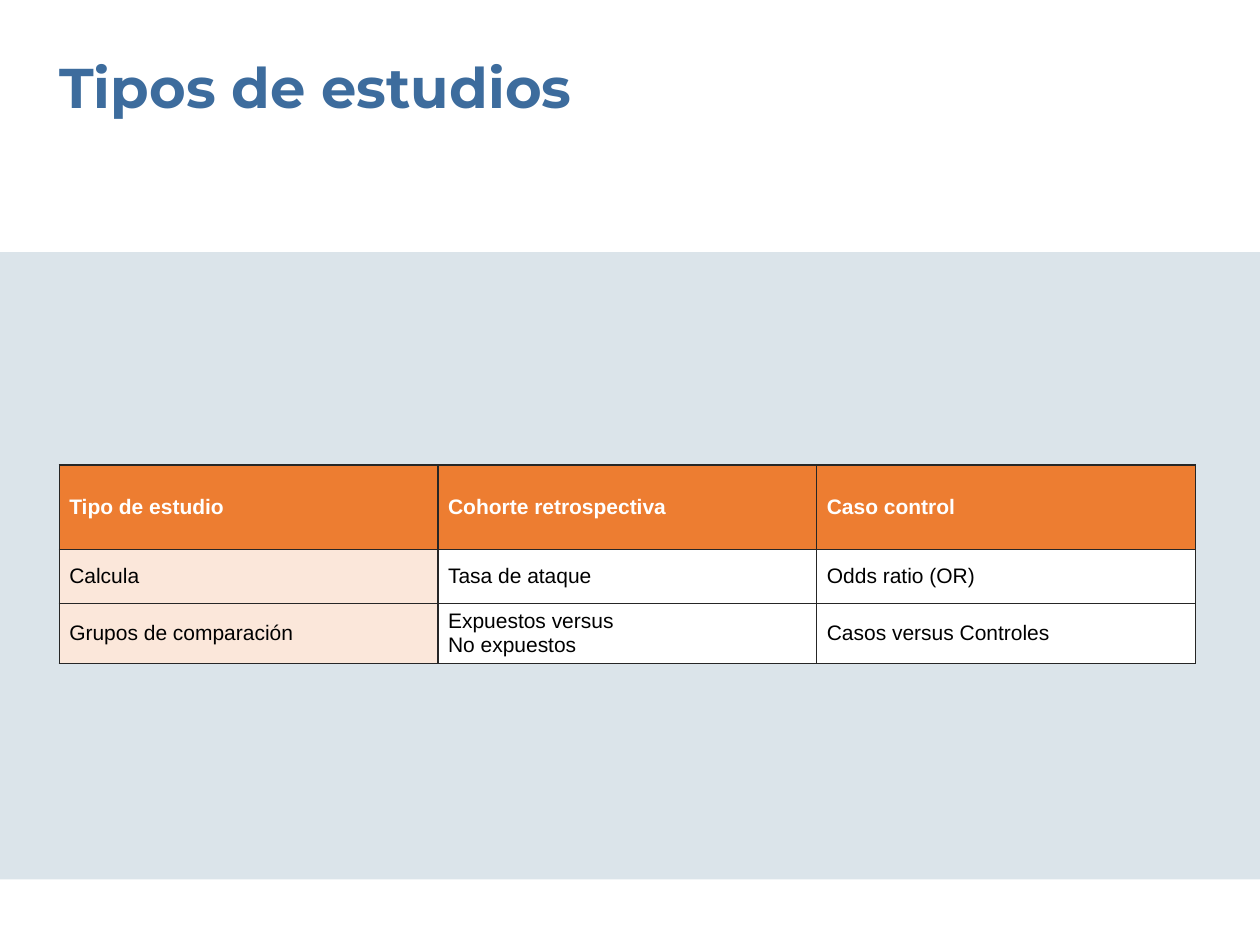
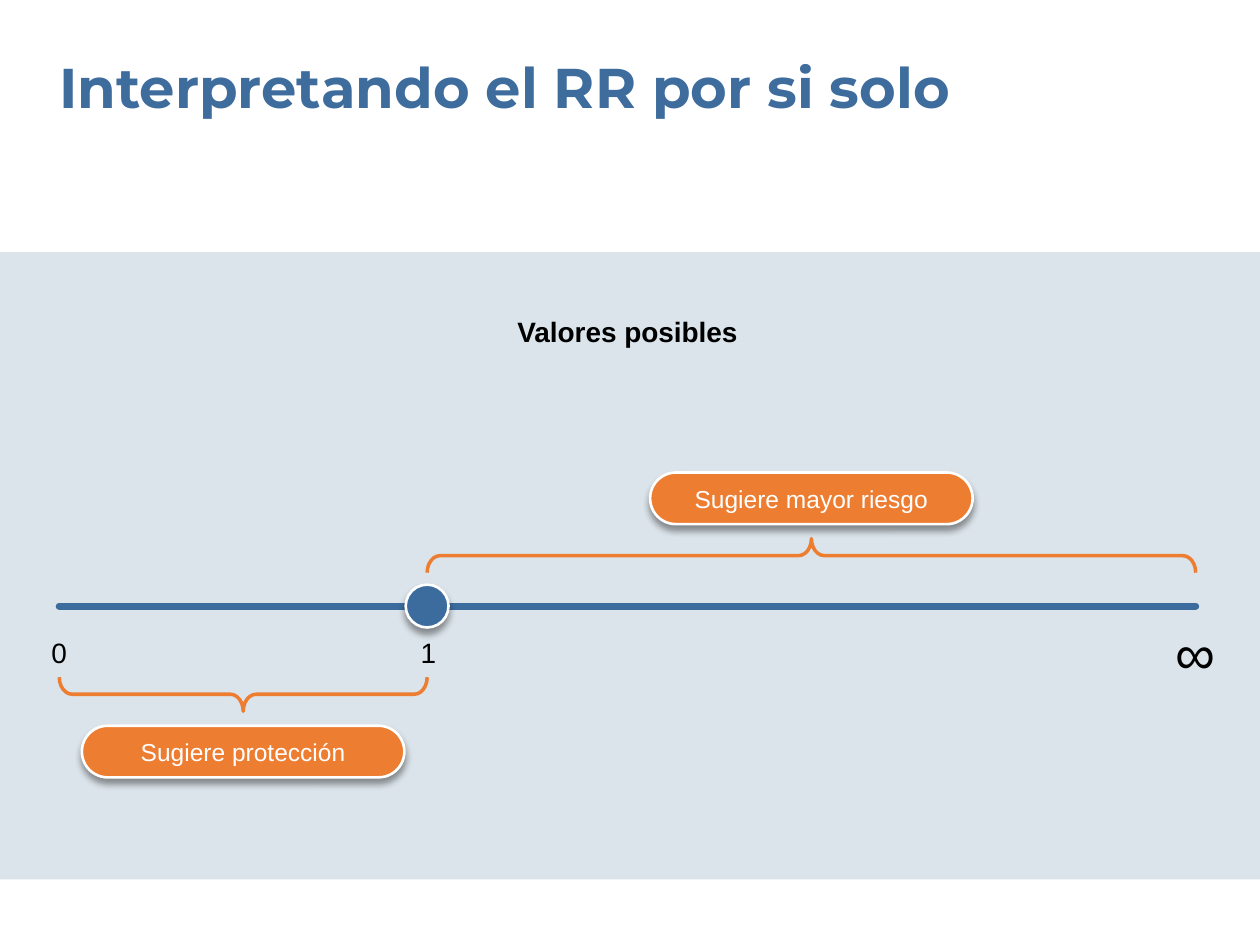
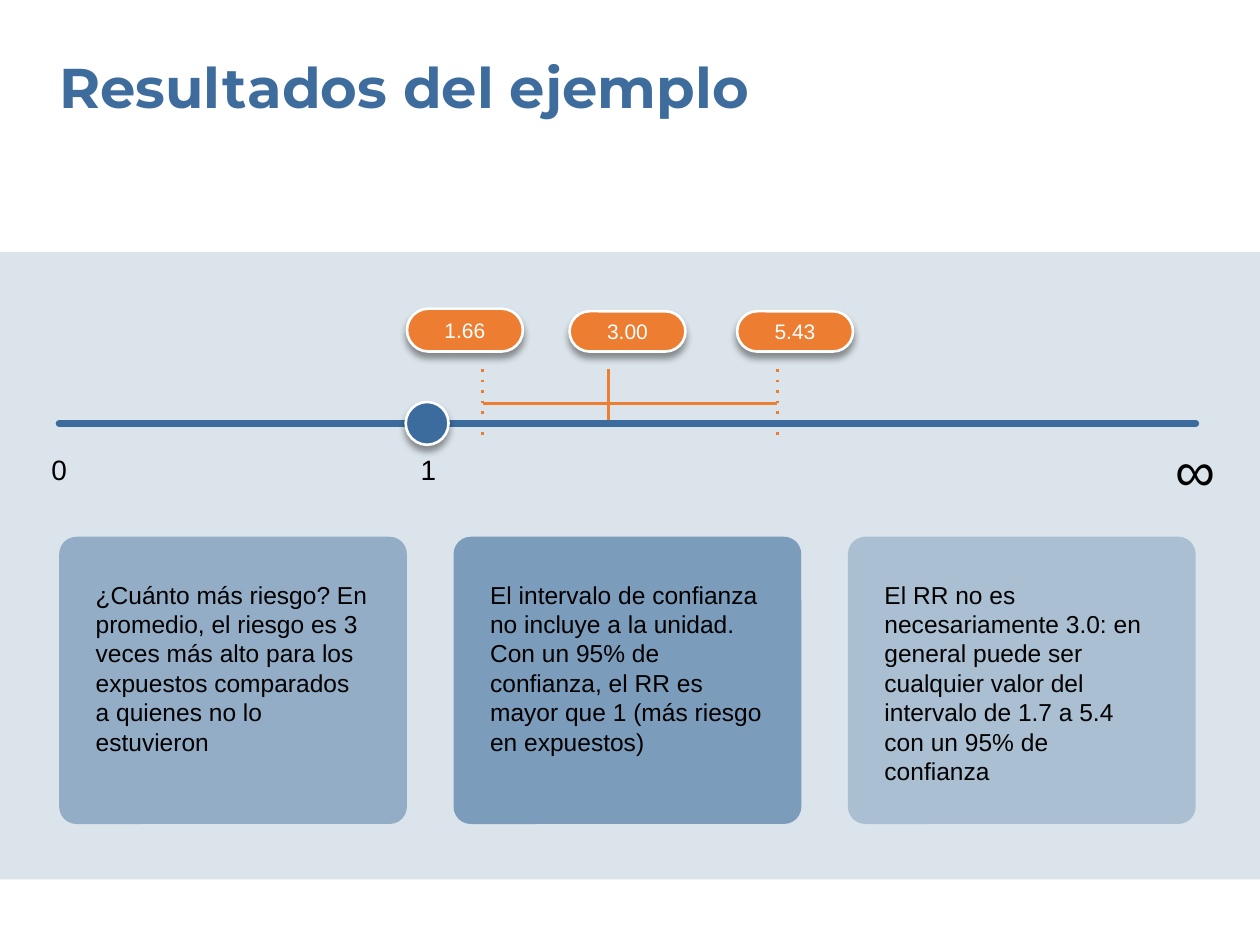
from lxml.etree import SubElement
from pptx import Presentation
from pptx.dml.color import RGBColor
from pptx.enum.shapes import MSO_CONNECTOR, MSO_SHAPE
from pptx.enum.text import MSO_ANCHOR, MSO_AUTO_SIZE, PP_ALIGN
from pptx.oxml.ns import qn
from pptx.util import Inches, Pt

# Shared look
BLUE, AXIS_BLUE, ORANGE, PEACH = "3D6C9D", "3C6C9D", "ED7D31", "FBE7DA"
BAND, WHITE, BLACK, BORDER = "DBE4EA", "FFFFFF", "000000", "262626"
BODY_FONT, TITLE_FONT = "Arial", "Montserrat"

# Shared grid, in inches
WIDTH, HEIGHT = 10, 7.5
LEFT, RIGHT = 0.47, 9.49
CONTENT = RIGHT - LEFT
UNITY = 3.39  # where the value 1 falls on the axis


def color(hex_string):
    return RGBColor.from_string(hex_string)


def box(*lengths):
    return [Inches(length) for length in lengths]


def add_child(parent, tag, **attributes):
    return SubElement(parent, qn(tag), {k: str(v) for k, v in attributes.items()})


# Text
def write(frame, lines, size, hex_color=BLACK, bold=False, font=BODY_FONT,
          align=PP_ALIGN.LEFT):
    for index, line in enumerate(lines):
        paragraph = frame.paragraphs[0] if index == 0 else frame.add_paragraph()
        paragraph.alignment = align
        run = paragraph.add_run()
        run.text = line
        run.font.name, run.font.size, run.font.bold = font, Pt(size), bold
        run.font.color.rgb = color(hex_color)


def set_insets(frame, horizontal=0, vertical=0):
    frame.margin_left = frame.margin_right = Inches(horizontal)
    frame.margin_top = frame.margin_bottom = Inches(vertical)
    frame.word_wrap = True


def add_text(slide, place, text, size, **style):
    frame = slide.shapes.add_textbox(*box(*place)).text_frame
    set_insets(frame)
    write(frame, [text], size, **style)


# Shapes and lines
def add_figure(slide, kind, place, fill=None, line=None, weight=1.5):
    figure = slide.shapes.add_shape(kind, *box(*place))
    figure.shadow.inherit = False
    if fill:
        figure.fill.solid()
        figure.fill.fore_color.rgb = color(fill)
    else:
        figure.fill.background()
    if line:
        figure.line.color.rgb = color(line)
        figure.line.width = Pt(weight)
    else:
        figure.line.fill.background()
    return figure


def add_shadow(figure):
    effects = figure._element.spPr.find(qn("a:effectLst"))
    shadow = add_child(effects, "a:outerShdw", blurRad=Pt(4), dist=Pt(3),
                       dir=90 * 60000, algn="ctr", rotWithShape=0)
    add_child(add_child(shadow, "a:srgbClr", val=BLACK), "a:alpha", val=40000)


def add_line(slide, start, end, hex_color=ORANGE, weight=1.5, dotted=False,
             rounded=False):
    line = slide.shapes.add_connector(MSO_CONNECTOR.STRAIGHT, *box(*start, *end))
    line.line.color.rgb = color(hex_color)
    line.line.width = Pt(weight)
    outline = line.line._get_or_add_ln()
    if rounded:
        outline.set("cap", "rnd")
    if dotted:
        add_child(outline, "a:prstDash", val="dot")
    add_child(line._element.spPr, "a:effectLst")


def add_pill(slide, center, bottom, width, height, text, size):
    pill = add_figure(slide, MSO_SHAPE.ROUNDED_RECTANGLE,
                      (center - width / 2, bottom - height, width, height),
                      ORANGE, WHITE)
    pill.adjustments[0] = 0.5
    add_shadow(pill)
    set_insets(pill.text_frame, 0.2, 0.12)
    pill.text_frame.vertical_anchor = MSO_ANCHOR.MIDDLE
    write(pill.text_frame, [text], size, WHITE, align=PP_ALIGN.CENTER)


def add_brace(slide, start, end, middle, rotation):
    depth, span = 0.27, end - start
    brace = add_figure(slide, MSO_SHAPE.RIGHT_BRACE,
                       ((start + end - depth) / 2, middle - span / 2, depth, span),
                       line=ORANGE, weight=2)
    brace.adjustments[0] = 0.38
    brace.rotation = rotation


def add_axis(slide, y):
    """Risk axis from 0 to infinity, with a knob at 1."""
    add_line(slide, (LEFT, y), (RIGHT, y), AXIS_BLUE, 4, rounded=True)
    knob = 0.34
    add_shadow(add_figure(slide, MSO_SHAPE.OVAL,
                          (UNITY - knob / 2, y - knob / 2, knob, knob),
                          AXIS_BLUE, WHITE))
    for text, x, drop, size in (("0", LEFT, 0.23, 16), ("1", UNITY + 0.01, 0.23, 16),
                                ("∞", RIGHT, 0.1, 32)):
        add_text(slide, (x - 0.18, y + drop, 0.36, size / 60), text, size,
                 align=PP_ALIGN.CENTER)


# Table
def set_borders(cell):
    properties = cell._tc.get_or_add_tcPr()
    for index, side in enumerate(("a:lnL", "a:lnR", "a:lnT", "a:lnB")):
        border = properties.makeelement(qn(side), {"w": str(Pt(0.75))})
        properties.insert(index, border)
        add_child(add_child(border, "a:solidFill"), "a:srgbClr", val=BORDER)


def add_grid(slide, top, row_heights, rows):
    columns = len(rows[0])
    table = slide.shapes.add_table(
        len(rows), columns, *box(LEFT, top, CONTENT, sum(row_heights))).table
    for column in table.columns:
        column.width = Inches(CONTENT / columns)
    for r, (height, texts) in enumerate(zip(row_heights, rows)):
        table.rows[r].height = Inches(height)
        header = r == 0
        for c, text in enumerate(texts):
            cell = table.cell(r, c)
            cell.vertical_anchor = MSO_ANCHOR.MIDDLE
            cell.margin_left = cell.margin_right = Inches(0.08)
            cell.margin_top = cell.margin_bottom = Inches(0.05)
            cell.fill.solid()
            cell.fill.fore_color.rgb = color(
                ORANGE if header else PEACH if c == 0 else WHITE)
            set_borders(cell)
            write(cell.text_frame, text.split("\n"), 12,
                  WHITE if header else BLACK, bold=header)


# Frame of every slide: title and band
def new_slide(deck, heading):
    slide = deck.slides.add_slide(deck.slide_layouts[5])
    add_figure(slide, MSO_SHAPE.RECTANGLE, (0, 2, WIDTH, 4.98), BAND)
    title = slide.shapes.title
    title.left, title.top, title.width, title.height = box(LEFT, 0.42, CONTENT, 0.54)
    frame = title.text_frame
    set_insets(frame)
    frame.auto_size = MSO_AUTO_SIZE.NONE
    frame.vertical_anchor = MSO_ANCHOR.TOP
    write(frame, [heading], 32, BLUE, bold=True, font=TITLE_FONT)
    return slide


def build_study_types(deck):
    slide = new_slide(deck, "Tipos de estudios")
    add_grid(slide, 3.69, (0.67, 0.43, 0.43), (
        ("Tipo de estudio", "Cohorte retrospectiva", "Caso control"),
        ("Calcula", "Tasa de ataque", "Odds ratio (OR)"),
        ("Grupos de comparación", "Expuestos versus\nNo expuestos",
         "Casos versus Controles")))


def build_interpretation(deck):
    slide = new_slide(deck, "Interpretando el RR por si solo")
    axis = 4.81
    add_text(slide, (LEFT, 2.5, CONTENT, 0.27), "Valores posibles", 16, bold=True,
             align=PP_ALIGN.CENTER)
    add_axis(slide, axis)
    for text, start, end, brace_y, rotation, pill_bottom in (
            ("Sugiere protección", LEFT, UNITY, axis + 0.7, 90, 6.17),
            ("Sugiere mayor riesgo", UNITY, RIGHT, axis - 0.4, 270, 4.16)):
        add_brace(slide, start, end, brace_y, rotation)
        add_pill(slide, (start + end) / 2, pill_bottom, 2.56, 0.41, text, 14)


def build_results(deck):
    slide = new_slide(deck, "Resultados del ejemplo")
    low, estimate, high, tick_top = 3.83, 4.83, 6.17, 2.93

    # Confidence interval
    for limit in (low, high):
        add_line(slide, (limit, tick_top), (limit, 3.46), dotted=True)
    add_line(slide, (low, 3.2), (high, 3.2))
    add_line(slide, (estimate, tick_top), (estimate, 3.37))
    add_axis(slide, 3.36)
    for value, center, height in (("1.66", 3.69, 0.34), ("3.00", 4.98, 0.32),
                                  ("5.43", 6.31, 0.32)):
        add_pill(slide, center, 2.79, 0.92, height, value, 12)

    # Conclusions
    card_width, top, padding = 2.76, 4.26, 0.29
    step = (CONTENT - card_width) / 2
    conclusions = (
        (45, "¿Cuánto más riesgo? En promedio, el riesgo es 3 veces más alto para "
             "los expuestos comparados a quienes no lo estuvieron"),
        (60, "El intervalo de confianza no incluye a la unidad. Con un 95% de "
             "confianza, el RR es mayor que 1 (más riesgo en expuestos)"),
        (30, "El RR no es necesariamente 3.0: en general puede ser cualquier valor "
             "del intervalo de 1.7 a 5.4 con un 95% de confianza"))
    for index, (opacity, conclusion) in enumerate(conclusions):
        left = LEFT + index * step
        card = add_figure(slide, MSO_SHAPE.ROUNDED_RECTANGLE,
                          (left, top, card_width, 2.28), AXIS_BLUE)
        card.adjustments[0] = 0.06
        tint = card._element.spPr.find(qn("a:solidFill")).find(qn("a:srgbClr"))
        add_child(tint, "a:alpha", val=opacity * 1000)
        add_text(slide, (left + padding, top + 0.34, 2.17, 1.65), conclusion, 14)


def main():
    deck = Presentation()
    deck.slide_width, deck.slide_height = box(WIDTH, HEIGHT)
    build_study_types(deck)
    build_interpretation(deck)
    build_results(deck)
    deck.save("out.pptx")


if __name__ == "__main__":
    main()
